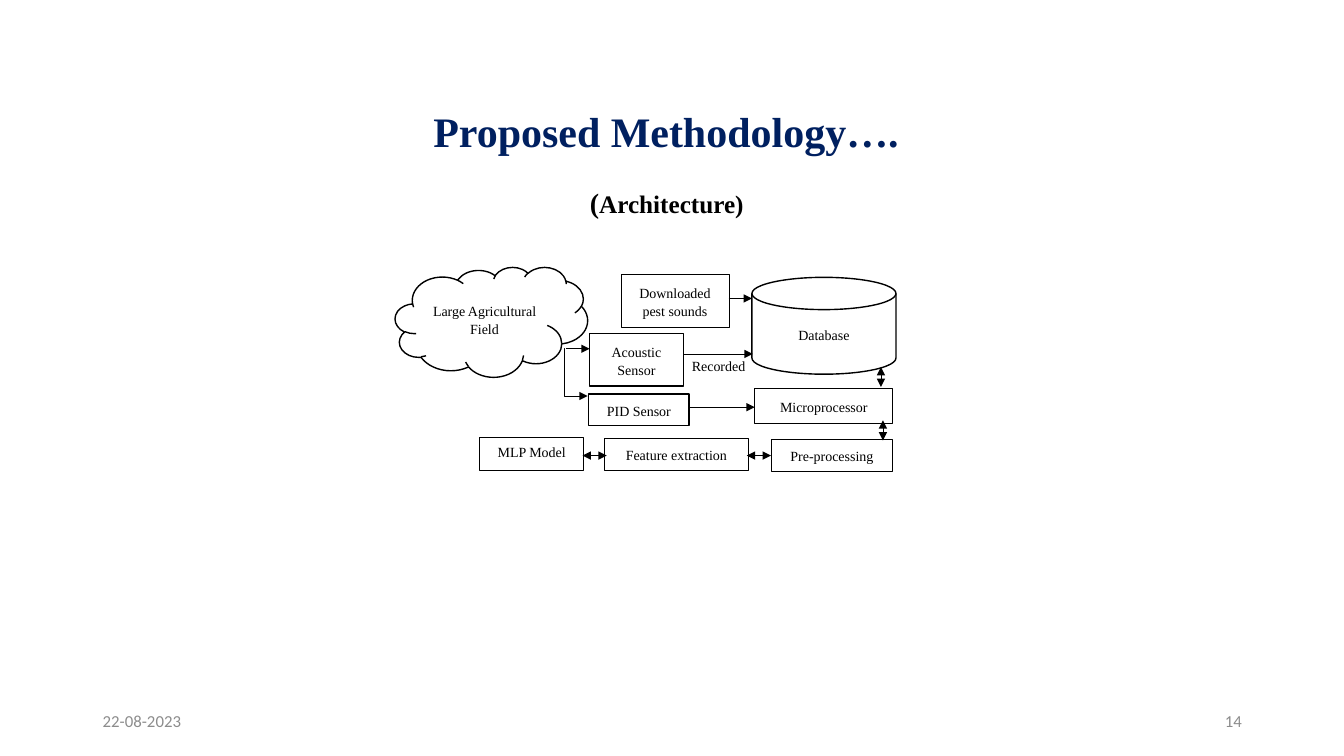
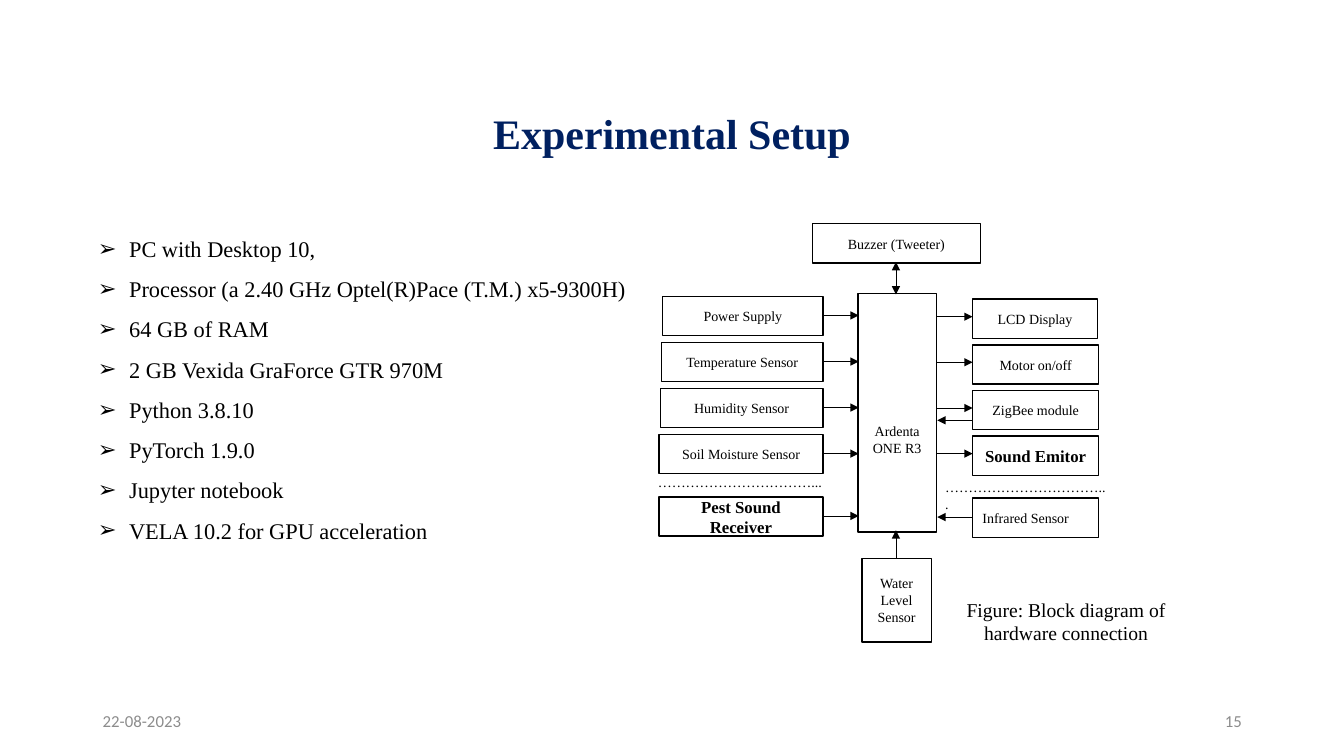
from lxml.etree import SubElement
from pptx import Presentation
from pptx.dml.color import RGBColor
from pptx.enum.shapes import MSO_CONNECTOR, MSO_SHAPE
from pptx.enum.text import MSO_ANCHOR, MSO_AUTO_SIZE, PP_ALIGN
from pptx.oxml.ns import qn
from pptx.util import Cm, Pt

COLORS = {"title": "002060", "ink": "000000", "footer": "8C8C8C", "paper": "FFFFFF"}
SERIF, SANS = "Times New Roman", "Calibri"
TITLE_ONLY, TITLE_AND_CONTENT = 5, 1
LABEL_LINE = Pt(13)
ROW_HEIGHT = 0.99


def lengths(values):
    """Turn centimetre numbers into lengths."""
    return [Cm(value) for value in values]


def write_text(paragraph, text, size=10, color="ink", font=SERIF, bold=False,
               align=PP_ALIGN.CENTER, spacing=None):
    """Append a formatted run to a paragraph."""
    paragraph.alignment = align
    if spacing:
        paragraph.line_spacing = spacing
    run = paragraph.add_run()
    run.text = text
    run.font.name = font
    run.font.size = Pt(size)
    run.font.bold = bold
    run.font.color.rgb = RGBColor.from_string(COLORS[color])


def place(shape, box):
    """Move a placeholder to a box and fix its text size."""
    shape.left, shape.top, shape.width, shape.height = lengths(box)
    shape.text_frame.auto_size = MSO_AUTO_SIZE.NONE


def add_label(slide, box, text, anchor=MSO_ANCHOR.MIDDLE, **text_format):
    """Add a wrapping text box and return its paragraph."""
    frame = slide.shapes.add_textbox(*lengths(box)).text_frame
    frame.word_wrap = True
    frame.vertical_anchor = anchor
    write_text(frame.paragraphs[0], text, **text_format)
    return frame.paragraphs[0]


def add_block(slide, box, text, kind=MSO_SHAPE.RECTANGLE, line=1, fill=None,
              anchor=MSO_ANCHOR.MIDDLE, top_inset=None, **text_format):
    """Add an outlined diagram block with its text."""
    shape = slide.shapes.add_shape(kind, *lengths(box))
    shape.shadow.inherit = False
    if fill:
        shape.fill.solid()
        shape.fill.fore_color.rgb = RGBColor.from_string(COLORS[fill])
    else:
        shape.fill.background()
    shape.line.color.rgb = RGBColor.from_string(COLORS["ink"])
    shape.line.width = Pt(line)
    frame = shape.text_frame
    frame.word_wrap = True
    frame.vertical_anchor = anchor
    if top_inset:
        frame.margin_top = Cm(top_inset)
    write_text(frame.paragraphs[0], text, **text_format)


def add_arrow(slide, start, end, both=False, bend=None):
    """Add a straight or bent arrow, with one head or two."""
    kind = MSO_CONNECTOR.STRAIGHT if bend is None else MSO_CONNECTOR.ELBOW
    arrow = slide.shapes.add_connector(kind, *lengths(start + end))
    arrow.line.color.rgb = RGBColor.from_string(COLORS["ink"])
    arrow.line.width = Pt(0.5)
    properties = arrow.element.spPr
    if bend is not None:
        adjustments = properties.find(qn("a:prstGeom")).find(qn("a:avLst"))
        SubElement(adjustments, qn("a:gd"), name="adj1", fmla=f"val {bend}")
    outline = properties.find(qn("a:ln"))
    if both:
        SubElement(outline, qn("a:headEnd"), type="triangle")
    SubElement(outline, qn("a:tailEnd"), type="triangle")
    SubElement(properties, qn("a:effectLst"))


def add_slide(presentation, layout, title, left, top, number):
    """Add a slide with the shared title style and footer."""
    slide = presentation.slides.add_slide(presentation.slide_layouts[layout])
    heading = slide.shapes.title
    place(heading, (left, top, 29.46, 1.93))
    heading.text_frame.vertical_anchor = MSO_ANCHOR.MIDDLE
    write_text(heading.text_frame.paragraphs[0], title, size=30, color="title",
               bold=True, spacing=0.9)
    footers = ((23.93, str(number), PP_ALIGN.RIGHT), (2.34, "22-08-2023", PP_ALIGN.LEFT))
    for footer_left, text, align in footers:
        add_label(slide, (footer_left, 17.65, 7.62, 1.02), text, size=12,
                  color="footer", font=SANS, align=align)
    return slide


def fill_list(placeholder, box, items):
    """Fill the body placeholder with arrow bullets."""
    place(placeholder, box)
    frame = placeholder.text_frame
    frame.vertical_anchor = MSO_ANCHOR.TOP
    for index, item in enumerate(items):
        paragraph = frame.add_paragraph() if index else frame.paragraphs[0]
        write_text(paragraph, item, size=16, align=PP_ALIGN.JUSTIFY, spacing=Pt(28.75))
        paragraph.space_before = Pt(0)
        properties = paragraph._p.get_or_add_pPr()
        properties.set("marL", str(Cm(0.79)))
        properties.set("indent", str(-Cm(0.79)))
        SubElement(properties, qn("a:buChar"), char="➢")


def build_methodology(presentation):
    """Build the architecture slide."""
    slide = add_slide(presentation, TITLE_ONLY, "Proposed Methodology….", 2.06, 2.41, 14)
    subtitle = add_label(slide, (13.21, 4.55, 7.19, 1.12), "(", MSO_ANCHOR.TOP,
                         size=20, bold=True)
    write_text(subtitle, "Architecture)", size=18, bold=True)
    blocks = (
        ("Downloaded pest sounds", (15.65, 6.91, 2.72, 1.35), {"line": 0.5}),
        ("Pre-processing", (19.43, 11.07, 3.07, 0.81), {"line": 0.5}),
        ("MLP Model", (12.09, 11.02, 2.62, 0.84),
         {"line": 0.5, "fill": "paper", "anchor": MSO_ANCHOR.TOP}),
        ("Microprocessor", (19.02, 9.78, 3.48, 0.89), {"line": 0.5}),
        ("PID Sensor", (14.83, 9.93, 2.54, 0.79), {}),
        ("Large Agricultural Field", (9.96, 6.73, 4.85, 2.77), {"kind": MSO_SHAPE.CLOUD}),
        ("Acoustic Sensor", (14.86, 8.41, 2.36, 1.32), {}),
        ("Database", (18.95, 6.99, 3.63, 2.44),
         {"kind": MSO_SHAPE.FLOWCHART_MAGNETIC_DISK}),
        ("Feature extraction", (15.24, 11.05, 3.61, 0.81), {"line": 0.5}),
    )
    for text, box, style in blocks:
        add_block(slide, box, text, spacing=LABEL_LINE, **style)
    add_label(slide, (17.02, 8.81, 2.18, 0.79), "Recorded", spacing=LABEL_LINE)
    one_way = (
        ((18.36, 7.52), (18.95, 7.52)),
        ((17.4, 10.26), (19.02, 10.26)),
        ((14.27, 8.79), (14.86, 8.79)),
        ((17.25, 8.92), (18.97, 8.92)),
    )
    two_way = (
        ((22.2, 9.25), (22.2, 9.75)),
        ((22.25, 10.59), (22.25, 11.1)),
        ((19.43, 11.48), (18.82, 11.48)),
        ((15.29, 11.48), (14.68, 11.48)),
    )
    for start, end in one_way:
        add_arrow(slide, start, end)
    for start, end in two_way:
        add_arrow(slide, start, end, both=True)
    add_arrow(slide, (14.22, 8.79), (14.81, 9.98), bend=1500)


def build_inputs(slide):
    """Add the column of blocks that feed the board."""
    rows = (("Power Supply", 4.04), ("Temperature Sensor", 4.07),
            ("Humidity Sensor", 4.1), ("Soil Moisture Sensor", 4.13))
    blocks = [(text, width, 7.47 + 1.16 * index, {})
              for index, (text, width) in enumerate(rows)]
    blocks.append(("Pest Sound Receiver", 4.13, 12.52, {"size": 12, "bold": True}))
    for text, width, top, style in blocks:
        add_block(slide, (20.74 - width, top, width, ROW_HEIGHT), text, **style)
        add_arrow(slide, (20.75, top + 0.48), (21.64, top + 0.48))


def build_outputs(slide):
    """Add the column of blocks on the right of the board."""
    board_edge, left = 23.62, 24.51
    rows = (("LCD Display", 3.15, {}), ("Motor on/off", 3.18, {}),
            ("ZigBee module", 3.18, {}),
            ("Sound Emitor", 3.18, {"size": 12, "bold": True}))
    for index, (text, width, style) in enumerate(rows):
        top = 7.54 + 1.15 * index
        add_block(slide, (left, top, width, ROW_HEIGHT), text, **style)
        add_arrow(slide, (board_edge, top + 0.44), (left, top + 0.44))
    add_block(slide, (left, 12.55, 3.18, ROW_HEIGHT), "Infrared Sensor",
              align=PP_ALIGN.LEFT)
    for height in (10.59, 13.03):
        add_arrow(slide, (left, height), (board_edge, height))


def build_setup(presentation):
    """Build the experimental setup slide."""
    slide = add_slide(presentation, TITLE_AND_CONTENT, "Experimental Setup", 2.21, 2.46, 15)
    fill_list(slide.placeholders[1], (2.21, 5.46, 14.15, 8.33), (
        "PC with Desktop 10,",
        "Processor (a 2.40 GHz Optel(R)Pace (T.M.) x5-9300H)",
        "64 GB of RAM",
        "2 GB Vexida GraForce GTR 970M",
        "Python 3.8.10",
        "PyTorch 1.9.0",
        "Jupyter notebook",
        "VELA 10.2 for GPU acceleration",
    ))
    add_block(slide, (21.62, 7.39, 1.98, 6.02), "Ardenta ONE R3", top_inset=1.45)
    add_block(slide, (20.47, 5.64, 4.24, ROW_HEIGHT), "Buzzer (Tweeter)")
    add_block(slide, (21.72, 14.07, 1.75, 2.11), "Water Level Sensor")
    add_arrow(slide, (22.58, 6.6), (22.58, 7.42), both=True)
    add_arrow(slide, (22.58, 14.07), (22.58, 13.36))
    build_inputs(slide)
    build_outputs(slide)
    for box in ((16.33, 11.66, 5.41, ROW_HEIGHT), (23.57, 11.99, 4.6, ROW_HEIGHT)):
        add_label(slide, box, "……………………………...", align=PP_ALIGN.LEFT)
    add_label(slide, (23.57, 14.94, 6.6, 1.45),
              "Figure: Block diagram of hardware connection", MSO_ANCHOR.TOP, size=14)


def main():
    """Build and save the presentation."""
    presentation = Presentation()
    presentation.slide_width, presentation.slide_height = lengths((33.87, 19.05))
    build_methodology(presentation)
    build_setup(presentation)
    presentation.save("out.pptx")


if __name__ == "__main__":
    main()
